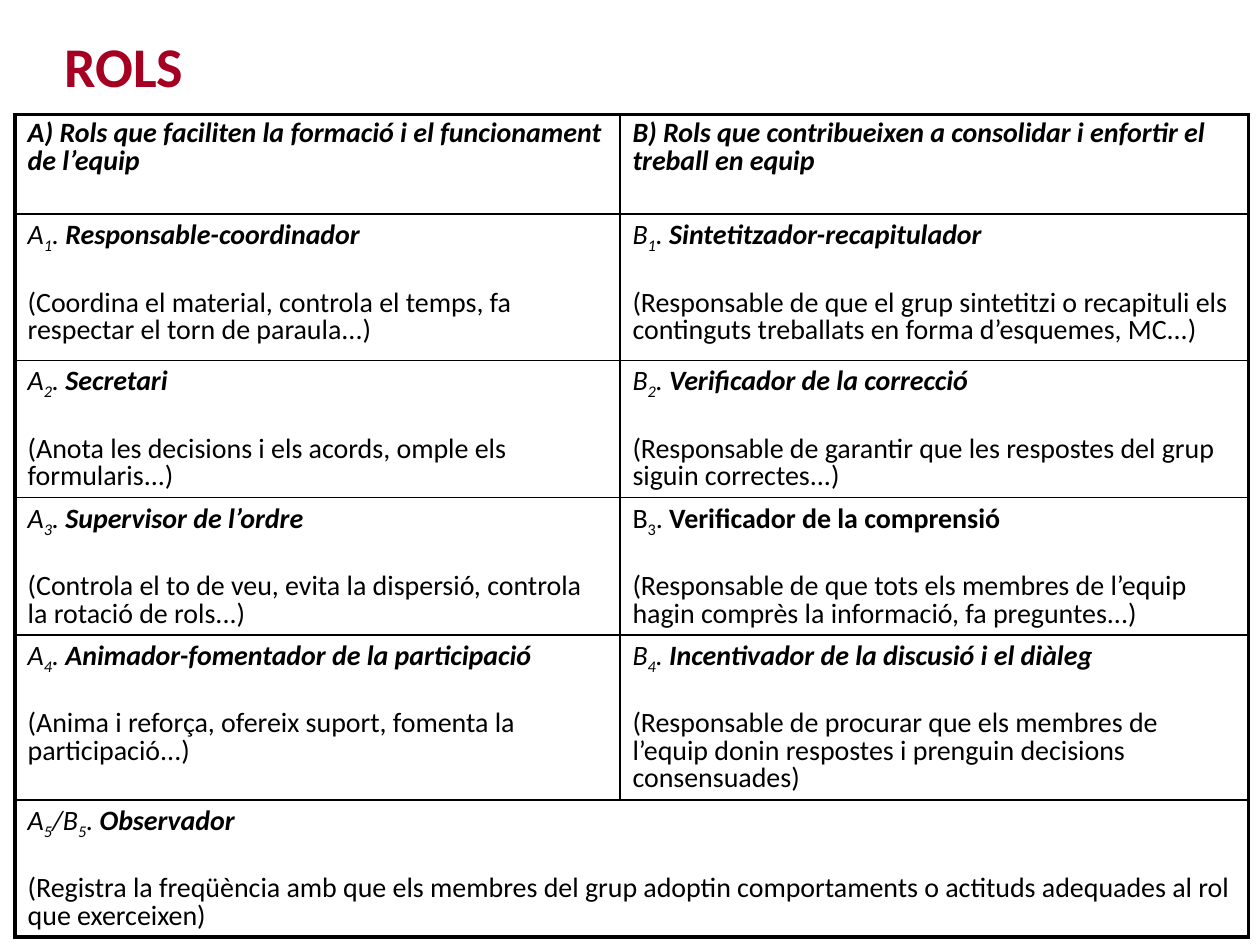
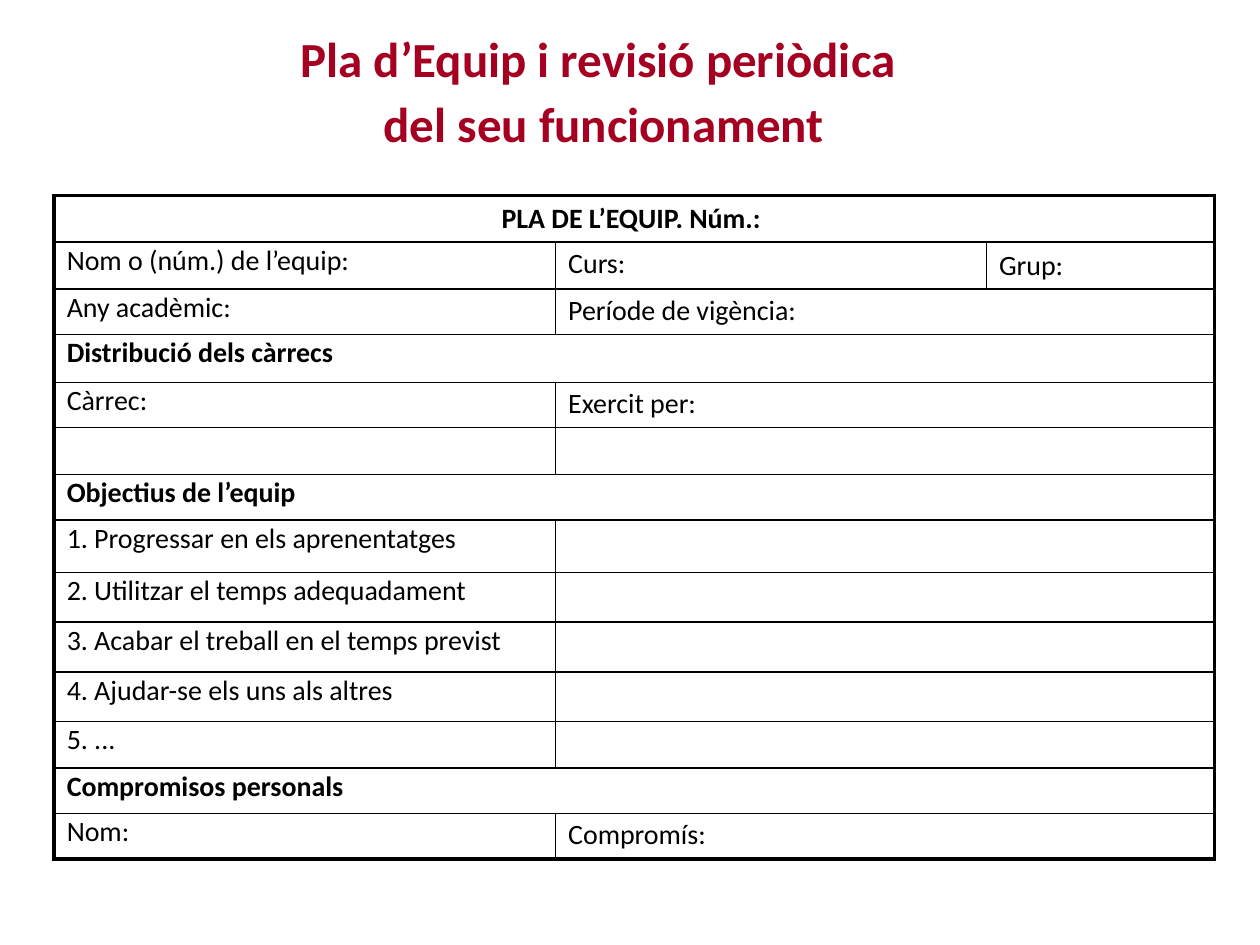
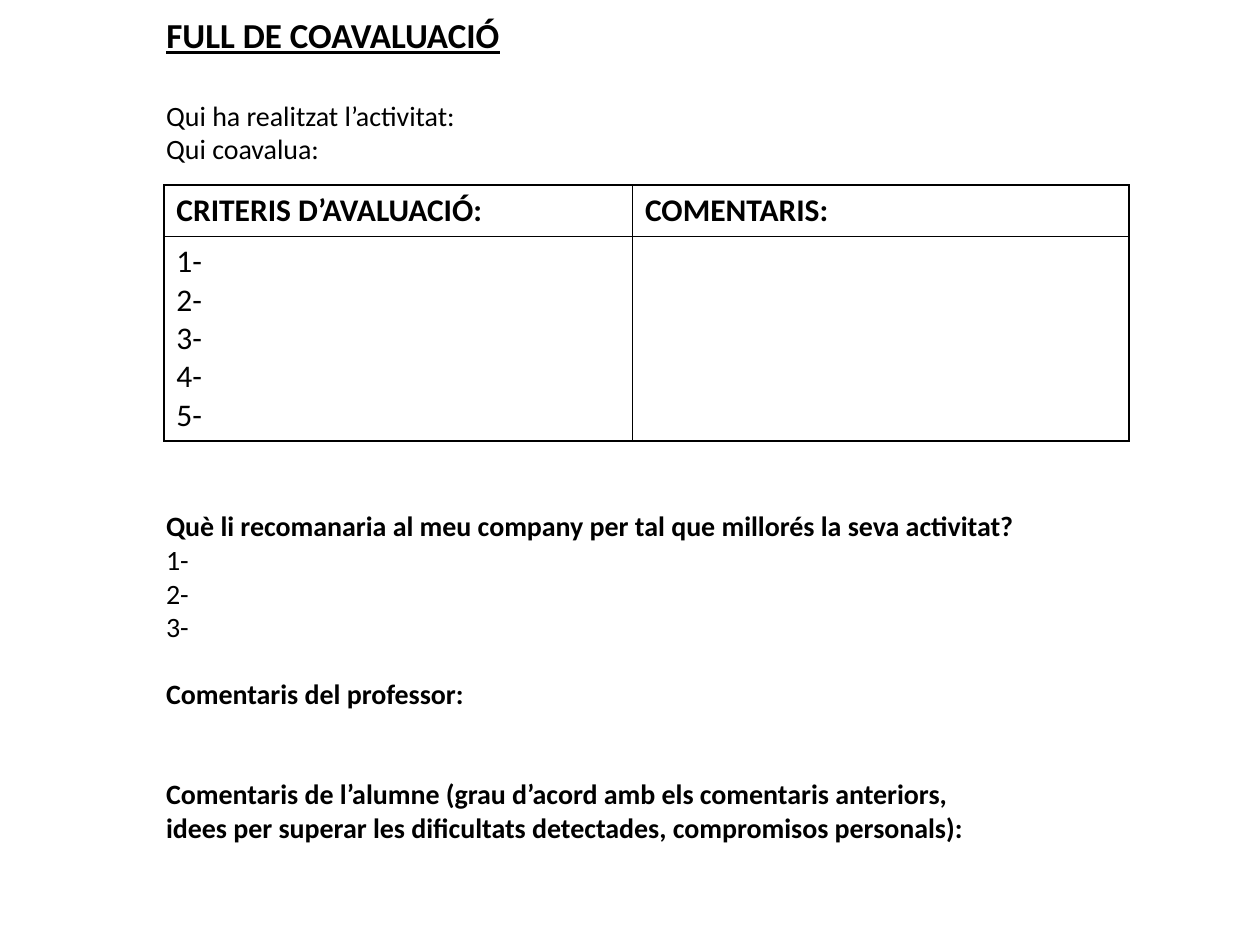
from dataclasses import dataclass, field
from itertools import groupby

from lxml import etree
from pptx import Presentation
from pptx.dml.color import RGBColor
from pptx.enum.text import MSO_ANCHOR, MSO_AUTO_SIZE, PP_ALIGN
from pptx.oxml.ns import qn
from pptx.util import Inches, Pt

LEFT, CENTER = PP_ALIGN.LEFT, PP_ALIGN.CENTER
TOP = MSO_ANCHOR.TOP
NO_AUTOFIT = MSO_AUTO_SIZE.NONE
TITLE_ONLY = 5

FONT = "Calibri"
COLORS = {"title": "A50021", "text": "000000", "border": "000000"}
BODY_SIZE = 16
THIN, THICK = 1, 2.25
ROLE_GAP = 22.5   # between a role's name and its description, points
LINE_GAP = 19     # height of one skipped line of body text, points


# Text and table model
@dataclass
class TextRun:
    text: str
    bold: bool = False
    italic: bool = False
    underline: bool = False
    subscript: bool = False


@dataclass
class Line:
    runs: list[TextRun]
    size: float = BODY_SIZE
    color: str = "text"
    spacing: float = 1.0
    space_before: float = 0
    alignment: PP_ALIGN = LEFT


@dataclass
class Cell:
    lines: list[Line] = field(default_factory=list)
    span: int = 1


@dataclass
class Role:
    code: str
    name: str
    description: str
    italic: bool = True


def plain(text: str, *, bold: bool = False, underline: bool = False, **layout) -> Line:
    """One line with a single run."""
    return Line([TextRun(text, bold=bold, underline=underline)], **layout)


# Drawing functions
def add_run(paragraph, text: str, *, size: float, color: str, bold: bool = False,
            italic: bool = False, underline: bool = False, subscript: bool = False) -> None:
    run = paragraph.add_run()
    run.text = text
    font = run.font
    font.name, font.size = FONT, Pt(size)
    font.bold, font.italic, font.underline = bold, italic, underline
    font.color.rgb = RGBColor.from_string(COLORS[color])
    if subscript:
        font._element.set("baseline", "-25000")


def write_lines(text_frame, lines: list[Line]) -> None:
    for index, line in enumerate(lines):
        paragraph = text_frame.add_paragraph() if index else text_frame.paragraphs[0]
        paragraph.alignment = line.alignment
        paragraph.line_spacing = line.spacing
        paragraph.space_before = Pt(line.space_before)
        for run in line.runs:
            add_run(paragraph, run.text, size=line.size, color=line.color, bold=run.bold,
                    italic=run.italic, underline=run.underline, subscript=run.subscript)


def fill_frame(shape, lines: list[Line], wrap: bool = True) -> None:
    text_frame = shape.text_frame
    text_frame.word_wrap = wrap
    text_frame.auto_size = NO_AUTOFIT
    text_frame.vertical_anchor = TOP
    write_lines(text_frame, lines)


def add_titled_slide(presentation, box: tuple[float, ...], lines: list[Line], wrap: bool = True):
    slide = presentation.slides.add_slide(presentation.slide_layouts[TITLE_ONLY])
    title = slide.shapes.title
    title.left, title.top, title.width, title.height = map(Inches, box)
    fill_frame(title, lines, wrap)
    return slide


def add_text_box(slide, box: tuple[float, ...], lines: list[Line], wrap: bool = True) -> None:
    fill_frame(slide.shapes.add_textbox(*map(Inches, box)), lines, wrap)


def set_borders(cell, widths: dict[str, float]) -> None:
    properties = cell._tc.get_or_add_tcPr()
    for side, width in widths.items():
        border = etree.SubElement(properties, qn(f"a:ln{side}"), w=str(Pt(width)))
        fill = etree.SubElement(border, qn("a:solidFill"))
        etree.SubElement(fill, qn("a:srgbClr"), val=COLORS["border"])


def add_table(slide, left: float, top: float, widths: list[float], heights: list[float],
              rows: list[list[Cell]], outer: float = THICK) -> None:
    frame = slide.shapes.add_table(len(heights), len(widths), Inches(left), Inches(top),
                                   Inches(sum(widths)), Inches(sum(heights)))
    table = frame.table
    table.first_row = table.horz_banding = False
    for column, width in zip(table.columns, widths):
        column.width = Inches(width)
    for row, height in zip(table.rows, heights):
        row.height = Inches(height)

    for row_index, row in enumerate(rows):
        column_index = 0
        for content in row:
            end = column_index + content.span
            borders = {
                "L": outer if column_index == 0 else THIN,
                "R": outer if end == len(widths) else THIN,
                "T": outer if row_index == 0 else THIN,
                "B": outer if row_index == len(rows) - 1 else THIN,
            }
            for covered in range(column_index, end):
                cell = table.cell(row_index, covered)
                if covered > column_index:
                    borders.pop("L", None)
                set_borders(cell, borders)
                cell.fill.background()
                # Empty cells keep the body size so that rows do not grow
                if covered > column_index or not content.lines:
                    etree.SubElement(cell.text_frame.paragraphs[0]._p, qn("a:endParaRPr"),
                                     sz=str(BODY_SIZE * 100))
            origin = table.cell(row_index, column_index)
            write_lines(origin.text_frame, content.lines)
            if content.span > 1:
                origin.merge(table.cell(row_index, end - 1))
            column_index = end


# Slide 1: roles
ROLE_HEADINGS = [
    "A) Rols que faciliten la formació i el funcionament de l’equip",
    "B) Rols que contribueixen a consolidar i enfortir el treball en equip",
]
ROLE_PAIRS = [
    (Role("A1", "Responsable-coordinador",
          "(Coordina el material, controla el temps, fa respectar el torn de paraula...)"),
     Role("B1", "Sintetitzador-recapitulador",
          "(Responsable de que el grup sintetitzi o recapituli els continguts treballats "
          "en forma d’esquemes, MC...)")),
    (Role("A2", "Secretari",
          "(Anota les decisions i els acords, omple els formularis...)"),
     Role("B2", "Verificador de la correcció",
          "(Responsable de garantir que les respostes del grup siguin correctes...)")),
    (Role("A3", "Supervisor de l’ordre",
          "(Controla el to de veu, evita la dispersió, controla la rotació de rols...)"),
     Role("B3", "Verificador de la comprensió",
          "(Responsable de que tots els membres de l’equip hagin comprès la informació, "
          "fa preguntes...)", italic=False)),
    (Role("A4", "Animador-fomentador de la participació",
          "(Anima i reforça, ofereix suport, fomenta la participació...)"),
     Role("B4", "Incentivador de la discusió i el diàleg",
          "(Responsable de procurar que els membres de l’equip donin respostes i "
          "prenguin decisions consensuades)")),
]
OBSERVER = Role("A5/B5", "Observador",
                "(Registra la freqüència amb que els membres del grup adoptin comportaments "
                "o actituds adequades al rol que exerceixen)")


def role_cell(role: Role, span: int = 1) -> Cell:
    code = [TextRun("".join(part), italic=role.italic, subscript=is_digit)
            for is_digit, part in groupby(role.code, str.isdigit)]
    name = [TextRun(". ", italic=role.italic),
            TextRun(role.name, bold=True, italic=role.italic)]
    return Cell([Line(code + name, spacing=0.8),
                 plain(role.description, spacing=0.8, space_before=ROLE_GAP)], span)


def build_roles(presentation) -> None:
    slide = add_titled_slide(presentation, (0.41, 0.15, 9.31, 0.69), [
        plain("ROLS", bold=True, size=32, color="title", spacing=1.1)])
    headings = [Cell([Line([TextRun(text, bold=True, italic=True)], spacing=0.8)])
                for text in ROLE_HEADINGS]
    rows = [headings]
    rows += [[role_cell(role) for role in pair] for pair in ROLE_PAIRS]
    rows.append([role_cell(OBSERVER, span=2)])
    add_table(slide, 0.12, 0.91, [4.8, 4.99], [0.79, 1.16, 1.07, 1.07, 1.31, 1.07], rows)


# Slide 2: team plan
def section_row(text: str) -> list[Cell]:
    return [Cell([plain(text, bold=True, spacing=0.8)], span=3)]


def field_row(label: str = "", value: str = "") -> list[Cell]:
    return [Cell([plain(label, spacing=0.8)] if label else []),
            Cell([plain(value, spacing=0.9)] if value else [], span=2)]


def build_team_plan(presentation) -> None:
    slide = add_titled_slide(presentation, (0.96, 0.13, 7.66, 1.13), [
        plain(text, bold=True, size=28, color="title", spacing=1.1, alignment=CENTER)
        for text in ("Pla d’Equip i revisió periòdica ", "del seu funcionament")])
    goals = ["1. Progressar en els aprenentatges", "2. Utilitzar el temps adequadament",
             "3. Acabar el treball en el temps previst", "4. Ajudar-se els uns als altres",
             "5. ..."]
    rows = [
        [Cell([plain("PLA DE L’EQUIP. Núm.: ", bold=True, alignment=CENTER)], span=3)],
        [Cell([plain("Nom o (núm.) de l’equip:", spacing=0.8)]),
         Cell([plain("Curs:", spacing=0.9)]),
         Cell([plain("Grup:")])],
        field_row("Any acadèmic:", "Període de vigència:"),
        section_row("Distribució dels càrrecs"),
        field_row("Càrrec:", "Exercit per:"),
        field_row(),
        section_row("Objectius de l’equip"),
        *[field_row(goal) for goal in goals],
        section_row("Compromisos personals"),
        field_row("Nom:", "Compromís:"),
    ]
    heights = [0.36] * 3 + [0.38] + [0.36] * 3 + [0.42, 0.39, 0.4, 0.39] + [0.36] * 3
    add_table(slide, 0.43, 1.55, [3.98, 3.42, 1.81], heights, rows)


# Slide 3: peer assessment sheet
def numbered(count: int, size: float = BODY_SIZE) -> list[Line]:
    return [plain(f"{number}-", size=size) for number in range(1, count + 1)]


def build_peer_assessment(presentation) -> None:
    slide = add_titled_slide(presentation, (1.22, 0.06, 2.89, 0.44), [
        plain("FULL DE COAVALUACIÓ", bold=True, underline=True, size=20)], wrap=False)
    add_text_box(slide, (1.22, 0.73, 2.89, 0.64), [
        plain("Qui ha realitzat l’activitat:"), plain("Qui coavalua:")], wrap=False)
    add_table(slide, 1.3, 1.47, [3.72, 3.94], [0.4, 1.6], [
        [Cell([plain(text, bold=True, size=18)])
         for text in ("CRITERIS D’AVALUACIÓ:", "COMENTARIS:")],
        [Cell(numbered(5, size=18)), Cell()],
    ], outer=THIN)
    add_text_box(slide, (1.22, 3.99, 8.27, 3.04), [
        plain("Què li recomanaria al meu company per tal que millorés la seva activitat?",
              bold=True),
        *numbered(3),
        plain("Comentaris del professor:", bold=True, space_before=LINE_GAP),
        plain("Comentaris de l’alumne (grau d’acord amb els comentaris anteriors,",
              bold=True, space_before=2 * LINE_GAP),
        plain("idees per superar les dificultats detectades, compromisos personals):",
              bold=True),
    ])


def main() -> None:
    presentation = Presentation()
    presentation.slide_width, presentation.slide_height = Inches(10), Inches(7.5)
    build_roles(presentation)
    build_team_plan(presentation)
    build_peer_assessment(presentation)
    presentation.save("out.pptx")


if __name__ == "__main__":
    main()
